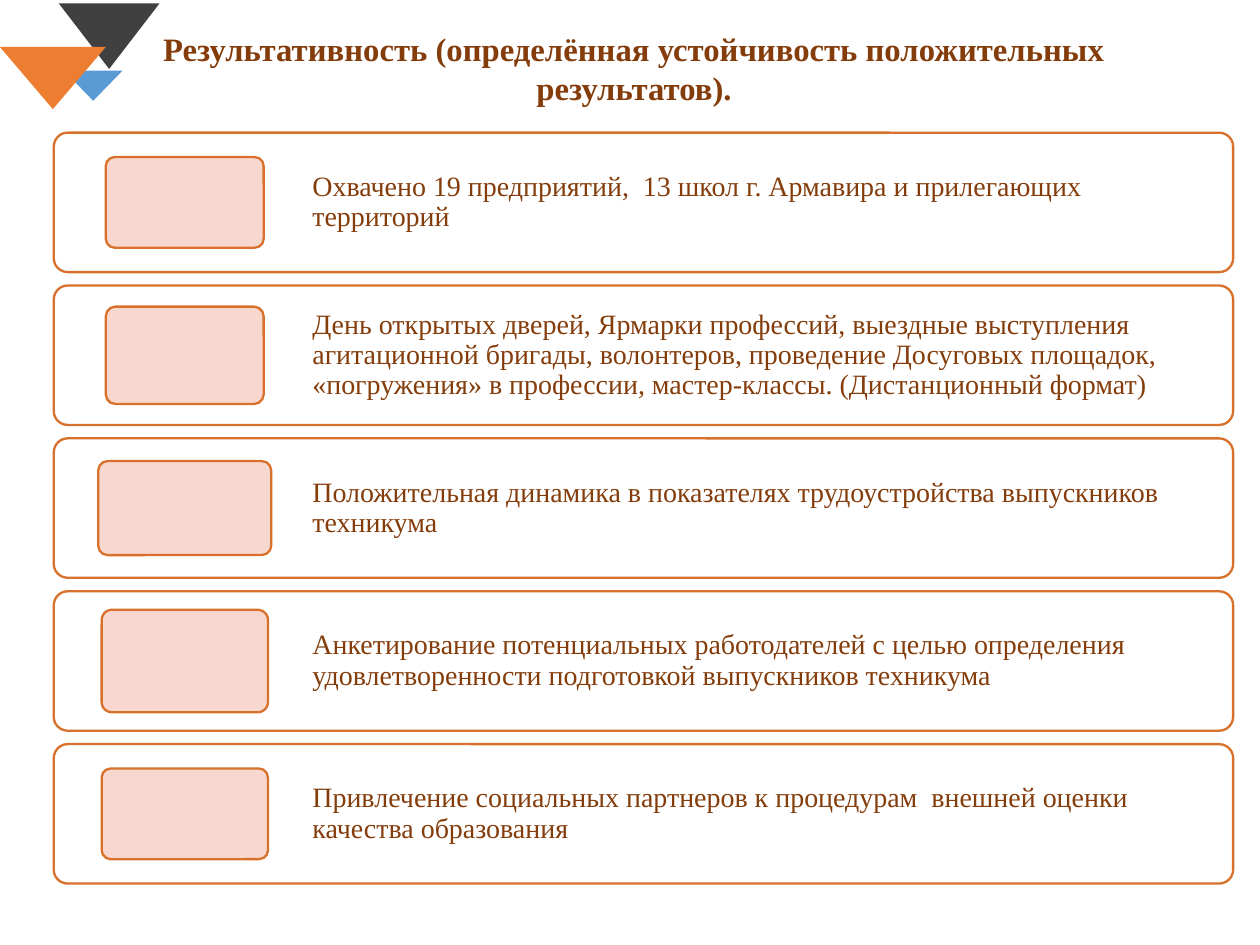
from dataclasses import dataclass

from pptx import Presentation
from pptx.dml.color import RGBColor
from pptx.enum.shapes import MSO_SHAPE as SHAPE
from pptx.enum.text import MSO_ANCHOR as ANCHOR, MSO_AUTO_SIZE as AUTO_SIZE, PP_ALIGN as ALIGN
from pptx.util import Inches, Pt


@dataclass(frozen=True)
class Theme:
    """Colours, font and type sizes of the slide."""
    font: str = "Times New Roman"
    title_size: int = 14
    body_size: int = 12
    text: str = "843C0B"
    outline: str = "D7712C"
    card: str = "FFFFFF"
    tile: str = "F8D7CE"
    dark: str = "404040"
    blue: str = "5B9BD5"
    orange: str = "ED7D31"


THEME = Theme()
TITLE = "Результативность (определённая устойчивость положительных результатов)."
RESULTS = [
    ("Охвачено 19 предприятий,  13 школ г. Армавира и прилегающих территорий", (0.94, 0.54)),
    ("День открытых дверей, Ярмарки профессий, выездные выступления агитационной бригады, "
     "волонтеров, проведение Досуговых площадок, «погружения» в профессии, мастер-классы. "
     "(Дистанционный формат)", (0.94, 0.58)),
    ("Положительная динамика в показателях трудоустройства выпускников техникума", (1.03, 0.56)),
    ("Анкетирование потенциальных работодателей с целью определения  "
     "удовлетворенности подготовкой выпускников техникума", (0.99, 0.61)),
    ("Привлечение социальных партнеров к процедурам  внешней оценки качества образования",
     (0.99, 0.54)),
]


def inches(*lengths):
    """Convert several lengths in inches."""
    return [Inches(n) for n in lengths]


def add_block(slide, kind, box, fill, line=None):
    """Add a flat filled shape with an optional outline."""
    sp = slide.shapes.add_shape(kind, *inches(*box))
    sp.shadow.inherit = False
    sp.fill.solid()
    sp.fill.fore_color.rgb = RGBColor.from_string(fill)
    if line:
        sp.line.color.rgb = RGBColor.from_string(line)
        sp.line.width = Pt(1)
    else:
        sp.line.fill.background()
    return sp


def add_rounded(slide, box, fill):
    """Add an outlined rectangle with small round corners."""
    add_block(slide, SHAPE.ROUNDED_RECTANGLE, box, fill, THEME.outline).adjustments[0] = 0.1


def write(tf, text, size, bold=False, spacing=1.0):
    """Write one styled paragraph and return it."""
    tf.word_wrap = True
    tf.text = text
    p = tf.paragraphs[0]
    p.line_spacing = spacing
    font = p.runs[0].font
    font.name, font.size, font.bold = THEME.font, Pt(size), bold
    font.color.rgb = RGBColor.from_string(THEME.text)
    return p


def add_title(slide, box):
    """Place and format the slide title."""
    sp = slide.shapes.title
    sp.left, sp.top, sp.width, sp.height = inches(*box)
    tf = sp.text_frame
    tf.auto_size = AUTO_SIZE.NONE
    tf.vertical_anchor = ANCHOR.TOP
    write(tf, TITLE, THEME.title_size, bold=True).alignment = ALIGN.CENTER


def add_corner(slide, left, top):
    """Draw the three overlapping triangles of the corner."""
    triangles = [
        (0.35, 0, 0.6, 0.39, THEME.dark),
        (0.38, 0.4, 0.35, 0.18, THEME.blue),
        (0, 0.26, 0.63, 0.37, THEME.orange),
    ]
    for dx, dy, width, height, fill in triangles:
        add_block(slide, SHAPE.FLOWCHART_MERGE, (left + dx, top + dy, width, height), fill)


def add_result(slide, box, text, tile):
    """Draw a result card with a tile on the left and text on the right."""
    left, top, width, height = box
    tile_width, tile_height = tile
    indent = 1.49
    add_rounded(slide, box, THEME.card)
    sp = slide.shapes.add_textbox(*inches(left + indent, top, width - indent, height))
    tf = sp.text_frame
    tf.margin_left = tf.margin_right = tf.margin_top = tf.margin_bottom = Inches(0.05)
    tf.vertical_anchor = ANCHOR.MIDDLE
    write(tf, text, THEME.body_size, spacing=0.9).alignment = ALIGN.LEFT
    tile_left = left + 0.78 - tile_width / 2
    tile_top = top + (height - tile_height) / 2
    add_rounded(slide, (tile_left, tile_top, tile_width, tile_height), THEME.tile)


def add_results(slide, box, gap):
    """Stack the result cards evenly in the box."""
    left, top, width, height = box
    step = (height + gap) / len(RESULTS)
    for i, (text, tile) in enumerate(RESULTS):
        add_result(slide, (left, top + i * step, width, step - gap), text, tile)


def main():
    """Build and save the slide."""
    prs = Presentation()
    prs.slide_width, prs.slide_height = inches(7.5, 7.5 * 3 / 4)
    slide = prs.slides.add_slide(prs.slide_layouts[5])
    add_title(slide, (0.41, 0.12, 6.73, 0.57))
    add_corner(slide, 0, 0.02)
    add_results(slide, (0.32, 0.79, 7.02, 4.47), 0.08)
    prs.save("out.pptx")


if __name__ == "__main__":
    main()
